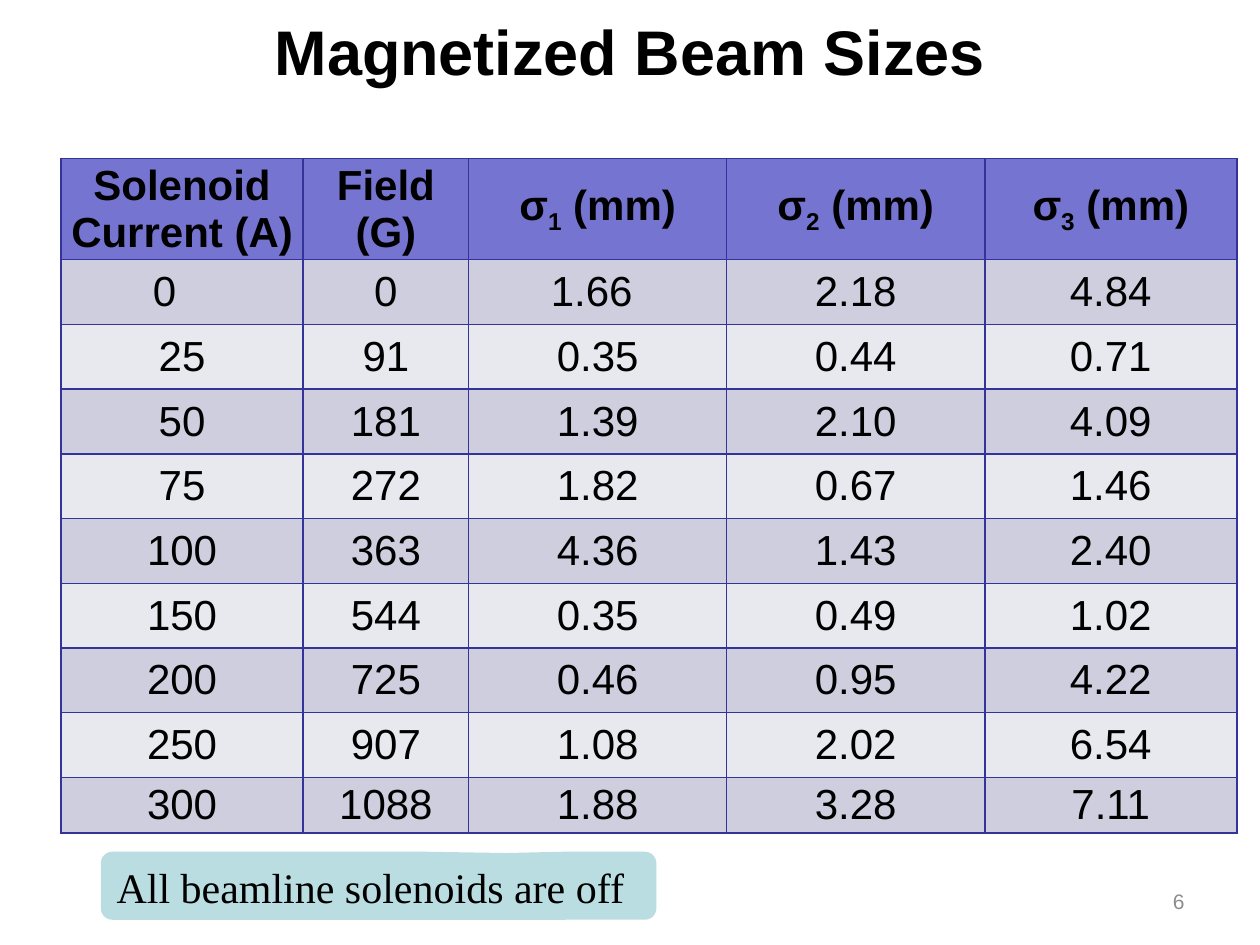
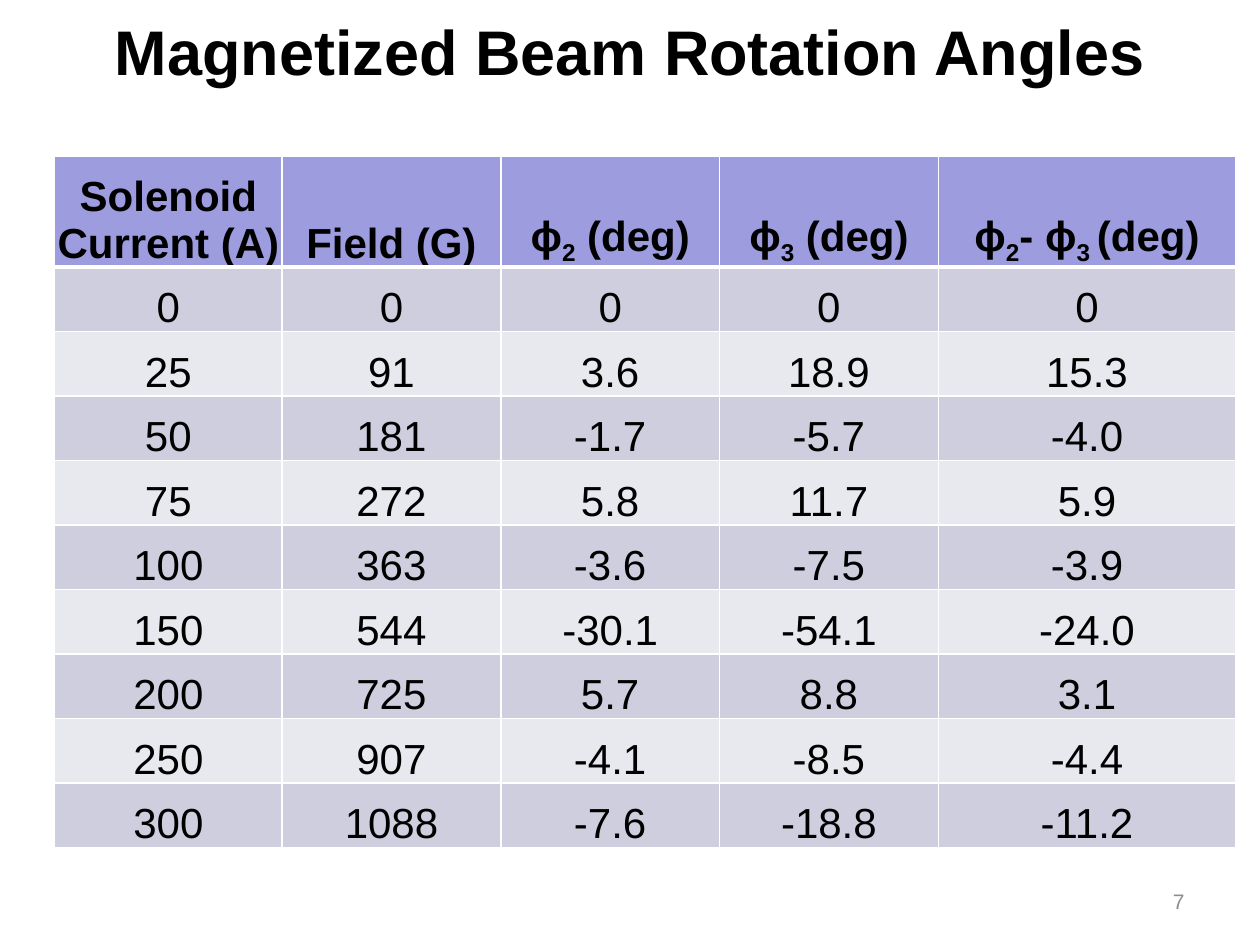
from dataclasses import dataclass

from lxml.etree import SubElement
from pptx import Presentation
from pptx.dml.color import RGBColor
from pptx.enum.shapes import MSO_SHAPE
from pptx.enum.text import MSO_ANCHOR, PP_ALIGN
from pptx.oxml.ns import qn
from pptx.slide import Slide
from pptx.table import _Cell
from pptx.text.text import TextFrame
from pptx.util import Pt

BLACK = RGBColor(0x00, 0x00, 0x00)
WHITE = RGBColor(0xFF, 0xFF, 0xFF)
NAVY = RGBColor(0x33, 0x33, 0x99)
GREY = RGBColor(0x8C, 0x8C, 0x8C)
VIOLET = RGBColor(0x75, 0x75, 0xD1)
LAVENDER = RGBColor(0x9C, 0x9C, 0xDF)
BAND_DARK = RGBColor(0xCE, 0xCE, 0xDE)
BAND_LIGHT = RGBColor(0xE8, 0xE8, 0xEF)
AQUA = RGBColor(0xBA, 0xDD, 0xE1)

SANS = "Arial"
SERIF = "Times New Roman"
SUBSCRIPT_MARK = "~"

SOLENOID_FIELDS = [
    ("0", "0"), ("25", "91"), ("50", "181"), ("75", "272"), ("100", "363"),
    ("150", "544"), ("200", "725"), ("250", "907"), ("300", "1088"),
]
BEAM_SIZES = [
    ("1.66 ", "2.18", "4.84"), ("0.35", "0.44", "0.71"), ("1.39", "2.10", "4.09"),
    ("1.82", "0.67", "1.46"), ("4.36", "1.43", "2.40"), ("0.35", "0.49", "1.02"),
    ("0.46", "0.95", "4.22"), ("1.08", "2.02", "6.54"), ("1.88", "3.28", "7.11"),
]
ROTATION_ANGLES = [
    ("0", "0", "0"), ("3.6", "18.9", "15.3"), ("-1.7", "-5.7", "-4.0"),
    ("5.8", "11.7", "5.9"), ("-3.6", "-7.5", "-3.9"), ("-30.1", "-54.1", "-24.0"),
    ("5.7", "8.8", "3.1"), ("-4.1", "-8.5", "-4.4"), ("-7.6", "-18.8", "-11.2"),
]


@dataclass(frozen=True)
class Box:
    left: float
    top: float
    width: float
    height: float

    def lengths(self) -> tuple[Pt, Pt, Pt, Pt]:
        return Pt(self.left), Pt(self.top), Pt(self.width), Pt(self.height)


@dataclass(frozen=True)
class MeasurementTable:
    left: float
    top: float
    headers: list[str]
    measurements: list[tuple[str, str, str]]
    column_widths: list[float]
    row_heights: list[float]
    header_fill: RGBColor
    border_color: RGBColor
    header_rule: float
    anchor: MSO_ANCHOR


TITLE_BOX = Box(0, 0, 720, 69)
NUMBER_BOX = Box(516, 500.4, 168, 28.8)
NOTE_BOX = Box(57.6, 486.7, 317.5, 38.9)

SIZE_TABLE = MeasurementTable(
    left=34.8,
    top=90.7,
    headers=["Solenoid\nCurrent (A)", "Field\n(G)",
             "σ~1~ (mm)", "σ~2~ (mm)", "σ~3~ (mm)"],
    measurements=BEAM_SIZES,
    column_widths=[138.5, 94.5, 147.5, 147.5, 144],
    row_heights=[54] + [37] * 8 + [31.7],
    header_fill=VIOLET,
    border_color=NAVY,
    header_rule=1,
    anchor=MSO_ANCHOR.MIDDLE,
)
ANGLE_TABLE = MeasurementTable(
    left=31.2,
    top=89.5,
    headers=["Solenoid Current (A)", "Field (G)",
             "ɸ~2~ (deg)", "ɸ~3~ (deg)", "ɸ~2~- ɸ~3 ~(deg)"],
    measurements=ROTATION_ANGLES,
    column_widths=[130, 125, 125, 125, 170],
    row_heights=[63] + [36.9] * 9,
    header_fill=LAVENDER,
    border_color=WHITE,
    header_rule=3,
    anchor=MSO_ANCHOR.BOTTOM,
)


def write_text(
    frame: TextFrame,
    text: str,
    *,
    size: float = 24,
    font: str = SANS,
    color: RGBColor = BLACK,
    bold: bool = False,
    align: PP_ALIGN = PP_ALIGN.CENTER,
    anchor: MSO_ANCHOR = MSO_ANCHOR.TOP,
) -> None:
    frame.word_wrap = True
    frame.vertical_anchor = anchor
    for line_index, line in enumerate(text.split("\n")):
        paragraph = frame.add_paragraph() if line_index else frame.paragraphs[0]
        paragraph.alignment = align
        for part_index, part in enumerate(line.split(SUBSCRIPT_MARK)):
            run = paragraph.add_run()
            run.text = part
            run.font.size = Pt(size)
            run.font.name = font
            run.font.bold = bold
            run.font.color.rgb = color
            if part_index % 2:
                run._r.get_or_add_rPr().set("baseline", "-25000")


def set_borders(cell: _Cell, color: RGBColor, widths: dict[str, float]) -> None:
    properties = cell._tc.get_or_add_tcPr()
    for side, width in widths.items():
        line = SubElement(properties, qn(f"a:ln{side}"), w=str(Pt(width)))
        fill = SubElement(line, qn("a:solidFill"))
        SubElement(fill, qn("a:srgbClr"), val=str(color))


def draw_table(slide: Slide, content: MeasurementTable) -> None:
    rows = [tuple(content.headers)] + [
        fields + values for fields, values in zip(SOLENOID_FIELDS, content.measurements)
    ]
    box = Box(content.left, content.top, sum(content.column_widths), sum(content.row_heights))
    table = slide.shapes.add_table(len(rows), len(rows[0]), *box.lengths()).table
    table.first_row = table.horz_banding = False
    for column, width in zip(table.columns, content.column_widths):
        column.width = Pt(width)
    for row, height in zip(table.rows, content.row_heights):
        row.height = Pt(height)
    for row_index, texts in enumerate(rows):
        is_header = row_index == 0
        band = BAND_DARK if row_index % 2 else BAND_LIGHT
        top = content.header_rule if row_index == 1 else 1
        bottom = content.header_rule if is_header else 1
        for column_index, text in enumerate(texts):
            cell = table.cell(row_index, column_index)
            cell.margin_left = cell.margin_right = Pt(0)
            cell.margin_top = cell.margin_bottom = Pt(0)
            cell.vertical_anchor = content.anchor
            set_borders(cell, content.border_color, {"L": 1, "R": 1, "T": top, "B": bottom})
            cell.fill.solid()
            cell.fill.fore_color.rgb = content.header_fill if is_header else band
            write_text(cell.text_frame, text, bold=is_header, anchor=content.anchor)
    if content is SIZE_TABLE:
        table.cell(1, 0).margin_right = Pt(20)


def draw_note(slide: Slide, text: str) -> None:
    note = slide.shapes.add_shape(MSO_SHAPE.ROUNDED_RECTANGULAR_CALLOUT, *NOTE_BOX.lengths())
    for index, adjustment in enumerate((0.23, -0.48, 0.17)):
        note.adjustments[index] = adjustment
    note.shadow.inherit = False
    note.fill.solid()
    note.fill.fore_color.rgb = AQUA
    note.line.fill.background()
    write_text(note.text_frame, text, font=SERIF, align=PP_ALIGN.LEFT)


def add_table_slide(
    presentation: Presentation, title: str, number: int, content: MeasurementTable
) -> Slide:
    slide = presentation.slides.add_slide(presentation.slide_layouts[6])
    title_frame = slide.shapes.add_textbox(*TITLE_BOX.lengths()).text_frame
    title_frame.margin_top = Pt(7)
    write_text(title_frame, title, size=36, bold=True)
    number_frame = slide.shapes.add_textbox(*NUMBER_BOX.lengths()).text_frame
    write_text(number_frame, str(number), size=12, color=GREY,
               align=PP_ALIGN.RIGHT, anchor=MSO_ANCHOR.MIDDLE)
    draw_table(slide, content)
    return slide


def main() -> None:
    presentation = Presentation()
    presentation.slide_width = Pt(720)
    presentation.slide_height = Pt(540)
    size_slide = add_table_slide(presentation, "Magnetized Beam Sizes", 6, SIZE_TABLE)
    draw_note(size_slide, "All beamline solenoids are off")
    add_table_slide(presentation, "Magnetized Beam Rotation Angles", 7, ANGLE_TABLE)
    presentation.save("out.pptx")


if __name__ == "__main__":
    main()
